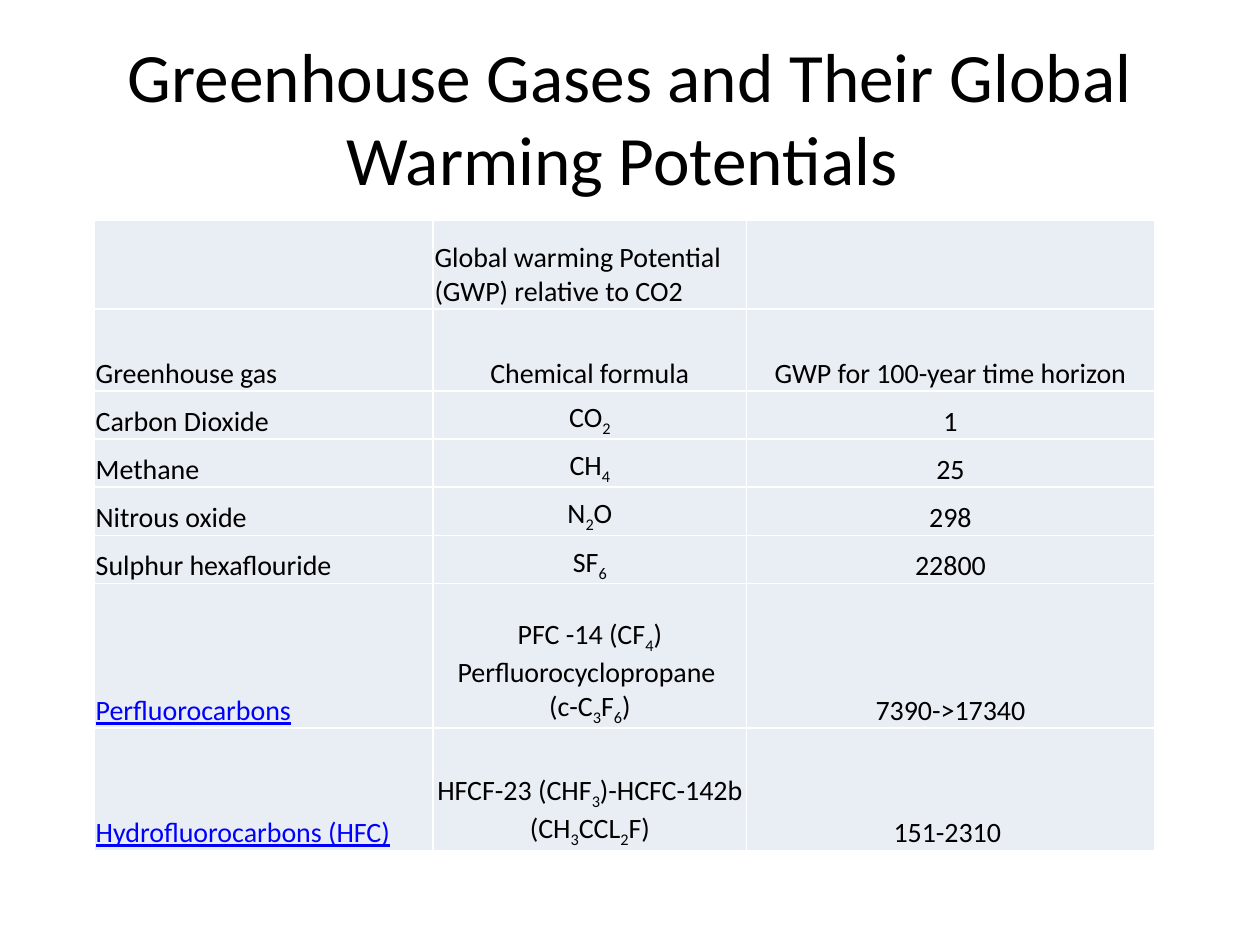
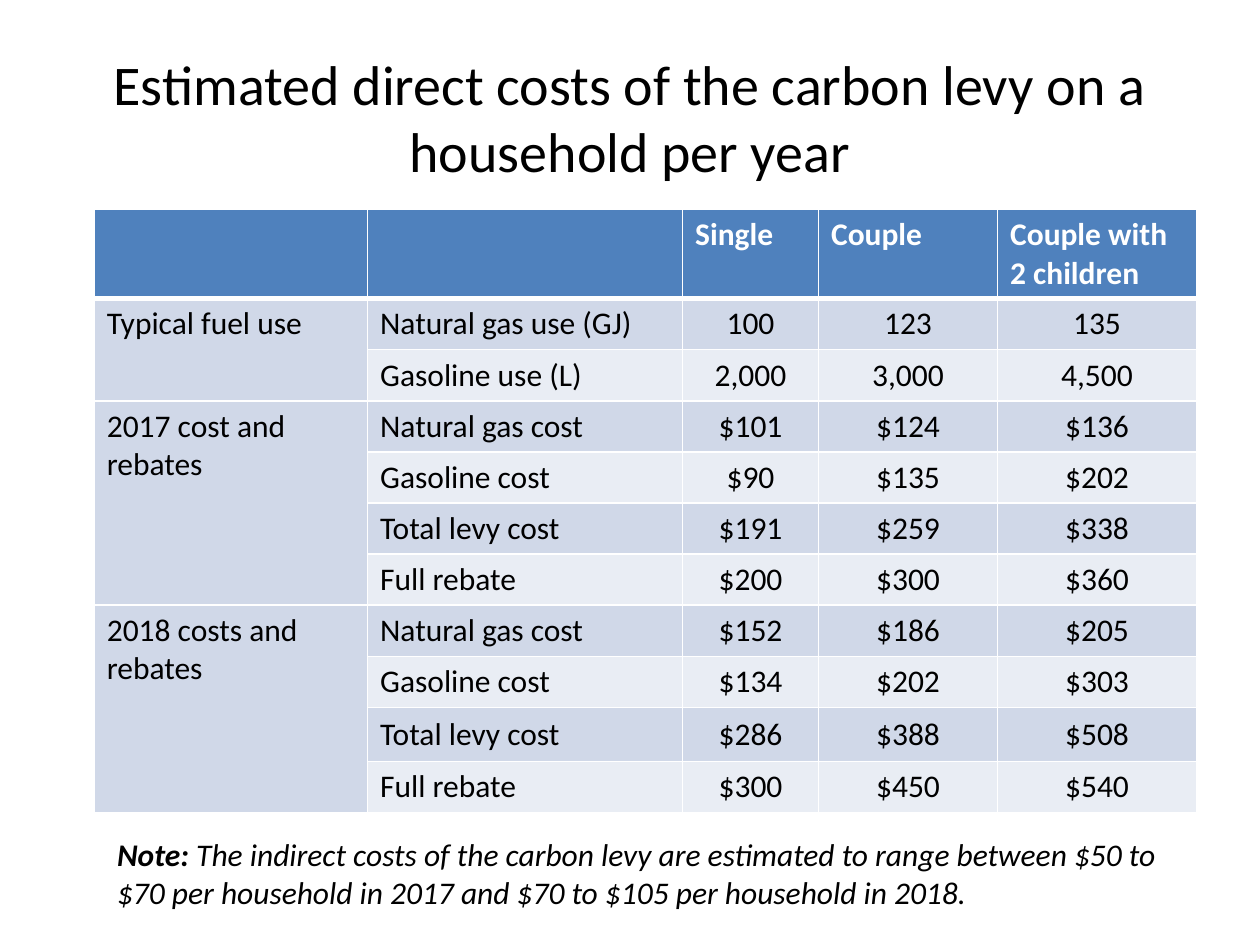
from lxml.etree import SubElement
from pptx import Presentation
from pptx.dml.color import RGBColor
from pptx.enum.text import MSO_ANCHOR, PP_ALIGN
from pptx.oxml.ns import qn
from pptx.util import Cm, Pt

FONT = "Calibri"
BLACK, WHITE, LINK = "000000", "FFFFFF", "0000FF"
HEADER, BAND_DARK, BAND_LIGHT = "4F81BD", "D0D8E8", "E9EDF4"
TABLE_LEFT = 1.9

TIGHT_CELL = {
    "vertical_anchor": MSO_ANCHOR.BOTTOM,
    "margin_left": Cm(0.03), "margin_right": Cm(0.03),
    "margin_top": Cm(0.03), "margin_bottom": Cm(0),
}

# An underscore makes the next character a subscript.
GASES = [
    ("", "Global warming Potential (GWP) relative to CO2", ""),
    ("Greenhouse gas", "Chemical formula", "GWP for 100-year time horizon"),
    ("Carbon Dioxide", "CO_2", "1"),
    ("Methane", "CH_4", "25"),
    ("Nitrous oxide", "N_2O", "298"),
    ("Sulphur hexaflouride", "SF_6", "22800"),
    ("Perfluorocarbons", "PFC -14 (CF_4) Perfluorocyclopropane \n(c-C_3F_6)",
     "7390->17340"),
    ("Hydrofluorocarbons (HFC)", "HFCF-23 (CHF_3)-HCFC-142b (CH_3CCL_2F)",
     "151-2310 "),
]
LINKED_GASES = ("Perfluorocarbons", "Hydrofluorocarbons (HFC)")

HOUSEHOLDS = ("Single", "Couple", "Couple with 2 children")
LEVY_GROUPS = {
    "Typical fuel use": [
        ("Natural gas use (GJ)", "100", "123", "135"),
        ("Gasoline use (L)", "2,000", "3,000", "4,500"),
    ],
    "2017 cost and rebates": [
        ("Natural gas cost", "$101", "$124", "$136"),
        ("Gasoline cost", "$90", "$135", "$202"),
        ("Total levy cost", "$191", "$259", "$338"),
        ("Full rebate", "$200", "$300", "$360"),
    ],
    "2018 costs and rebates": [
        ("Natural gas cost", "$152", "$186", "$205"),
        ("Gasoline cost", "$134", "$202", "$303"),
        ("Total levy cost", "$286", "$388", "$508"),
        ("Full rebate", "$300", "$450", "$540"),
    ],
}


def color(hex_value):
    return RGBColor.from_string(hex_value)


def set_values(target, values):
    for name, value in values.items():
        setattr(target, name, value)


def add_run(paragraph, text, size, ink=BLACK, **style):
    run = paragraph.add_run()
    run.text = text
    set_values(run.font, {"name": FONT, "size": Pt(size), **style})
    run.font.color.rgb = color(ink)
    return run


def add_formula(paragraph, text, size, ink=BLACK, **style):
    """Add text in which each character after an underscore is a subscript."""
    start, *rest = text.split("_")
    add_run(paragraph, start, size, ink, **style)
    for part in rest:
        subscript = add_run(paragraph, part[0], size, ink, **style)
        subscript._r.get_or_add_rPr().set("baseline", "-25000")
        if part[1:]:
            add_run(paragraph, part[1:], size, ink, **style)


def add_text_frame(slide, left, top, width, height, anchor=MSO_ANCHOR.TOP):
    box = slide.shapes.add_textbox(Cm(left), Cm(top), Cm(width), Cm(height))
    set_values(box.text_frame, {"word_wrap": True, "vertical_anchor": anchor})
    return box.text_frame


def add_title(slide, text, size):
    frame = add_text_frame(slide, 1.27, 0.76, 22.86, 3.18, MSO_ANCHOR.MIDDLE)
    frame.paragraphs[0].alignment = PP_ALIGN.CENTER
    add_run(frame.paragraphs[0], text, size)


def add_table(slide, top, widths, heights):
    table = slide.shapes.add_table(
        len(heights), len(widths), Cm(TABLE_LEFT), Cm(top),
        Cm(sum(widths)), Cm(sum(heights))).table
    set_values(table, {"first_row": False, "horz_banding": False})
    for column, width in zip(table.columns, widths):
        column.width = Cm(width)
    for row, height in zip(table.rows, heights):
        row.height = Cm(height)
    return table


def paint_cell(cell, fill, top=1, bottom=1):
    """Fill the cell and give it white borders, in points."""
    properties = cell._tc.get_or_add_tcPr()
    for side, weight in {"L": 1, "R": 1, "T": top, "B": bottom}.items():
        line = SubElement(properties, qn(f"a:ln{side}"), w=str(Pt(weight)))
        SubElement(SubElement(line, qn("a:solidFill")), qn("a:srgbClr"), val=WHITE)
    cell.fill.solid()
    cell.fill.fore_color.rgb = color(fill)


def write_cell(cell, text, size, align=PP_ALIGN.LEFT, ink=BLACK, **style):
    if not text:
        return
    for index, line in enumerate(text.split("\n")):
        frame = cell.text_frame
        paragraph = frame.add_paragraph() if index else frame.paragraphs[0]
        paragraph.alignment = align
        add_formula(paragraph, line, size, ink, **style)


def add_gas_table(slide):
    table = add_table(slide, 4.45, [6.83, 6.32, 8.22],
                      [1.78, 1.65] + [0.97] * 4 + [2.92, 2.46])
    for row, texts in enumerate(GASES):
        for column, text in enumerate(texts):
            cell = table.cell(row, column)
            paint_cell(cell, BAND_LIGHT)
            set_values(cell, TIGHT_CELL)
            align = PP_ALIGN.CENTER if row and column else PP_ALIGN.LEFT
            link = {"ink": LINK, "underline": True} if text in LINKED_GASES else {}
            write_cell(cell, text, 16, align, **link)


def add_levy_table(slide):
    table = add_table(slide, 4.22, [5.51, 6.35, 2.74, 3.61, 4.01],
                      [1.8] + [1.03] * 8 + [1.09, 1.03])
    for column, household in enumerate(("", "", *HOUSEHOLDS)):
        cell = table.cell(0, column)
        paint_cell(cell, HEADER, bottom=3)
        write_cell(cell, household, 18, ink=WHITE, bold=True)

    row = 1
    for group, lines in LEVY_GROUPS.items():
        group_cell = table.cell(row, 0)
        group_cell.merge(table.cell(row + len(lines) - 1, 0))
        write_cell(group_cell, group, 18)
        for line in lines:
            top = 3 if row == 1 else 1
            paint_cell(table.cell(row, 0), BAND_DARK, top)
            for column, text in enumerate(line, start=1):
                cell = table.cell(row, column)
                paint_cell(cell, BAND_DARK if row % 2 else BAND_LIGHT, top)
                cell.vertical_anchor = MSO_ANCHOR.MIDDLE
                align = PP_ALIGN.LEFT if column == 1 else PP_ALIGN.CENTER
                write_cell(cell, text, 18, align)
            row += 1


def add_note(slide, label, text):
    paragraph = add_text_frame(slide, 2.11, 16.71, 22.02, 1.8).paragraphs[0]
    add_run(paragraph, label, 18, bold=True, italic=True)
    add_run(paragraph, text, 18, italic=True)


def main():
    deck = Presentation()
    set_values(deck, {"slide_width": Cm(25.4), "slide_height": Cm(19.05)})
    blank = deck.slide_layouts[6]

    gases = deck.slides.add_slide(blank)
    add_title(gases, "Greenhouse Gases and Their Global Warming Potentials ", 39.6)
    add_gas_table(gases)

    levy = deck.slides.add_slide(blank)
    add_title(levy, "Estimated direct costs of the carbon levy on a household per year", 32)
    add_levy_table(levy)
    add_note(levy, "Note: ",
             "The indirect costs of the carbon levy are estimated to range between "
             "$50 to $70 per household in 2017 and $70 to $105 per household in 2018.")

    deck.save("out.pptx")


if __name__ == "__main__":
    main()
